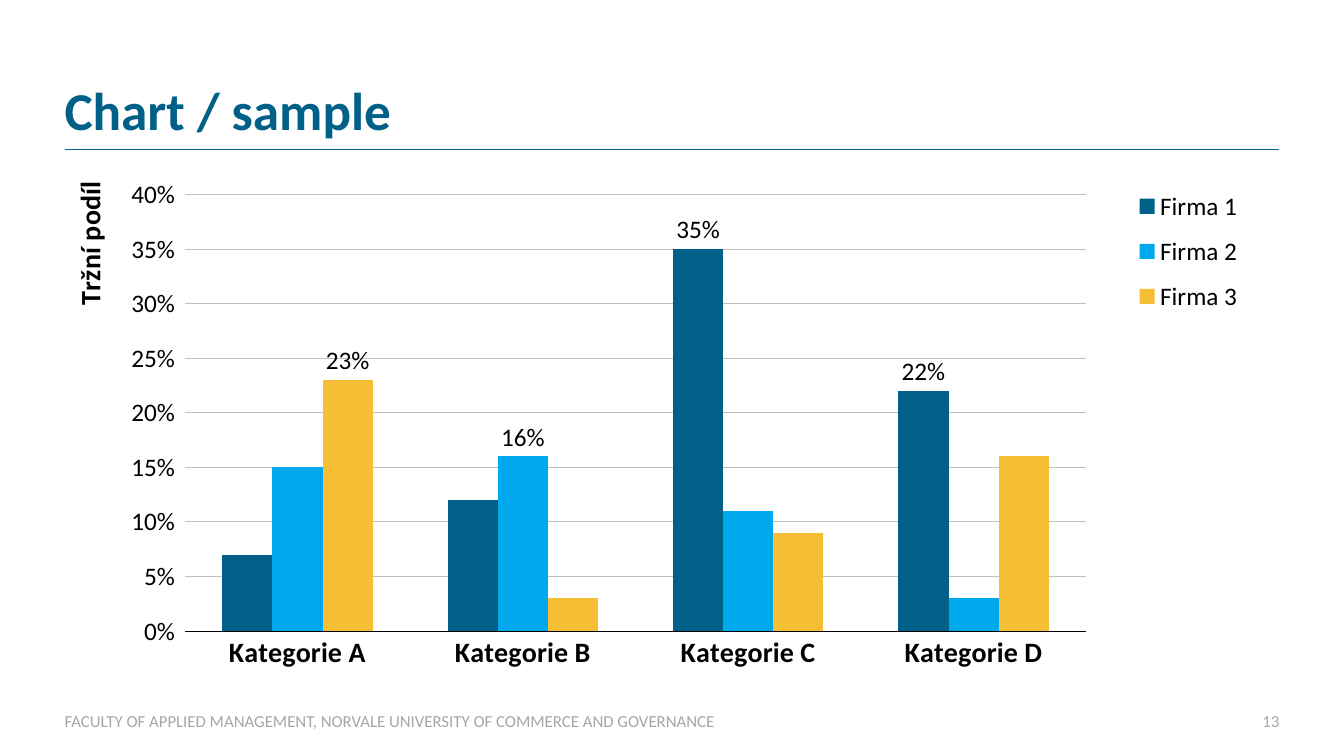
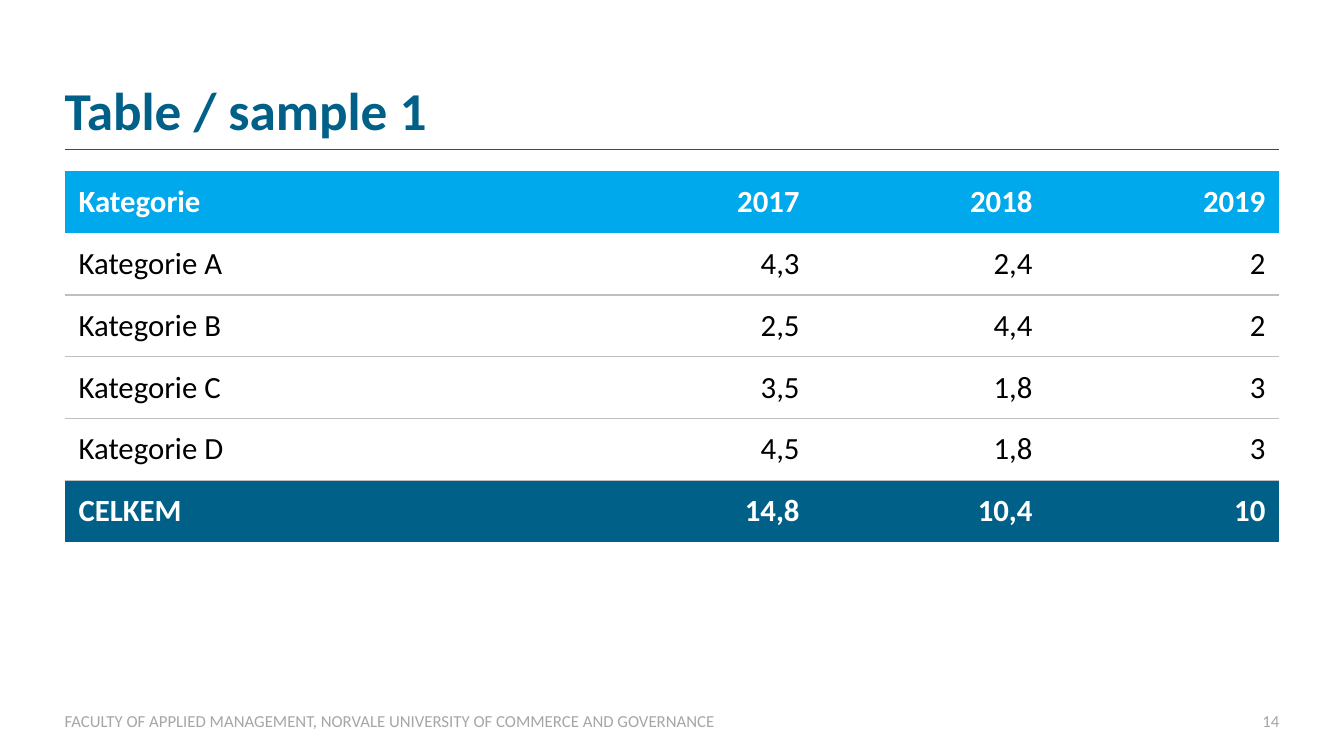
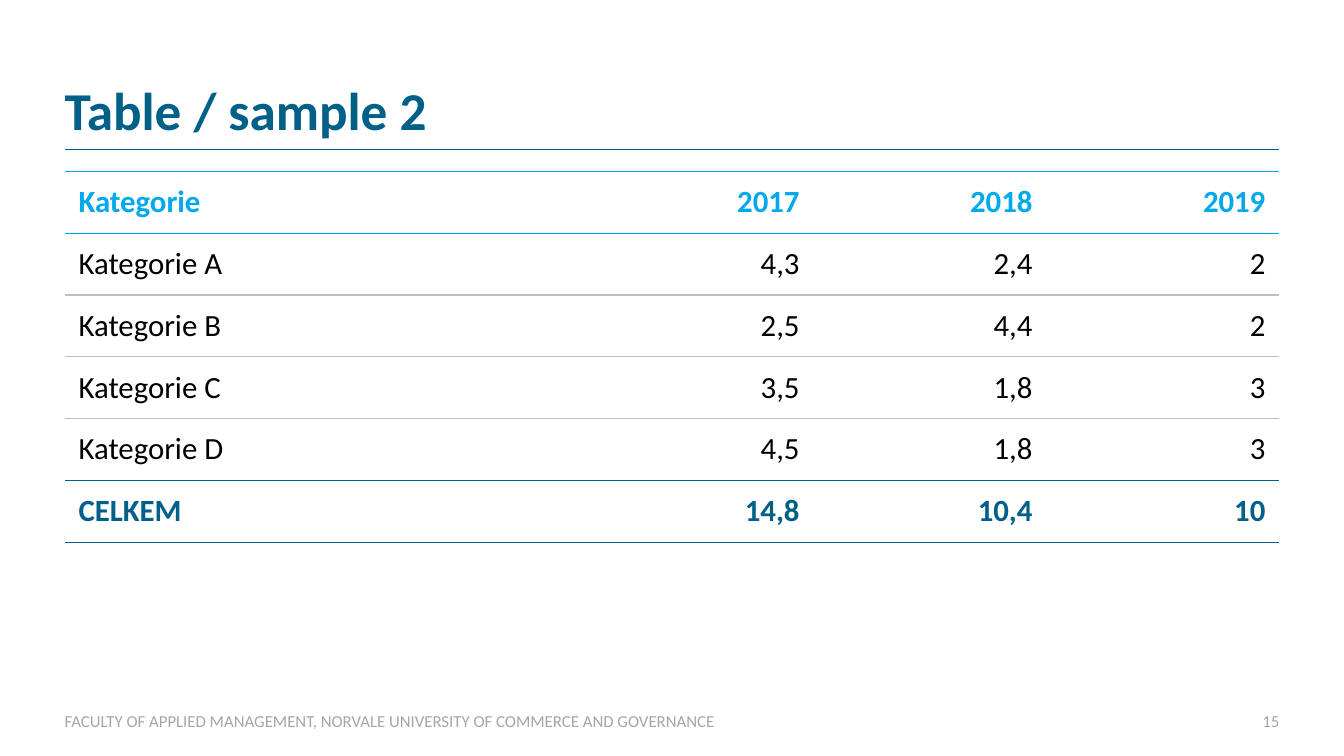
from lxml import etree
from pptx import Presentation
from pptx.chart.data import CategoryChartData
from pptx.dml.color import RGBColor
from pptx.enum.chart import XL_CHART_TYPE, XL_LABEL_POSITION, XL_LEGEND_POSITION, XL_TICK_MARK
from pptx.enum.shapes import MSO_CONNECTOR
from pptx.enum.text import MSO_ANCHOR, MSO_AUTO_SIZE, PP_ALIGN
from pptx.oxml.ns import qn
from pptx.util import Inches, Pt

COLUMNS = XL_CHART_TYPE.COLUMN_CLUSTERED
LABEL_ABOVE = XL_LABEL_POSITION.OUTSIDE_END
LEGEND_RIGHT = XL_LEGEND_POSITION.RIGHT
TICK_NONE = XL_TICK_MARK.NONE
TICK_OUT = XL_TICK_MARK.OUTSIDE
STRAIGHT = MSO_CONNECTOR.STRAIGHT
MIDDLE, BOTTOM = MSO_ANCHOR.MIDDLE, MSO_ANCHOR.BOTTOM
NO_AUTOFIT = MSO_AUTO_SIZE.NONE
LEFT, RIGHT = PP_ALIGN.LEFT, PP_ALIGN.RIGHT

FONT = "Calibri"
TEAL, BLUE, YELLOW = "006088", "00A8EC", "F5BE34"
BLACK, WHITE, SILVER, GRAY = "000000", "FFFFFF", "BFBFBF", "A6A6A6"
PLAIN_TABLE_STYLE = "{2D5ABB26-0587-4C30-8999-92F81FD0307C}"

MARGIN, CONTENT_WIDTH = 0.64, 12.05
TITLE_BOX = (MARGIN, 0.83, CONTENT_WIDTH, 0.58)
RULE_TOP = 1.48
CHART_BOX = (MARGIN, 1.7, CONTENT_WIDTH, 5.12)
TABLE_BOX = (MARGIN, 1.7, CONTENT_WIDTH, 3.68)
FOOTER_BOX = (MARGIN, 7.05, 10.16, 0.2)
NUMBER_BOX = (12.18, 7.05, 0.51, 0.2)
FIRST_NUMBER = 13
FOOTER = "FACULTY OF APPLIED MANAGEMENT, NORVALE UNIVERSITY OF COMMERCE AND GOVERNANCE"

CATEGORIES = ["Kategorie A", "Kategorie B", "Kategorie C", "Kategorie D"]
COMPANIES = [
    ("Firma 1", TEAL, (0.07, 0.12, 0.35, 0.22), (2, 3)),
    ("Firma 2", BLUE, (0.15, 0.16, 0.11, 0.03), (1,)),
    ("Firma 3", YELLOW, (0.23, 0.03, 0.09, 0.16), (0,)),
]
TABLE_ROWS = [
    ("Kategorie", "2017", "2018", "2019"),
    ("Kategorie A", "4,3", "2,4", "2"),
    ("Kategorie B", "2,5", "4,4", "2"),
    ("Kategorie C", "3,5", "1,8", "3"),
    ("Kategorie D", "4,5", "1,8", "3"),
    ("CELKEM", "14,8", "10,4", "10"),
]
FIRST_COLUMN_WIDTH = 5.12


def rgb(color):
    """Turn a hex string into a colour."""
    return RGBColor.from_string(color)


def inches(box):
    """Turn a box of numbers into lengths."""
    return [Inches(length) for length in box]


def style_font(font, size, color=BLACK, bold=False):
    """Apply the deck's typeface with a size, colour and weight."""
    font.name = FONT
    font.size = Pt(size)
    font.bold = bold
    font.color.rgb = rgb(color)


def write(frame, text, size, color, bold=False, align=LEFT, anchor=MIDDLE):
    """Write one line into a text frame without insets."""
    frame.margin_left = frame.margin_right = frame.margin_top = frame.margin_bottom = 0
    frame.auto_size = NO_AUTOFIT
    frame.word_wrap = True
    frame.vertical_anchor = anchor
    paragraph = frame.paragraphs[0]
    paragraph.alignment = align
    run = paragraph.add_run()
    run.text = text
    style_font(run.font, size, color, bold)
    return paragraph


def add_framed_slide(presentation, title, number):
    """Add a slide with its title, rule, footer and number."""
    slide = presentation.slides.add_slide(presentation.slide_layouts[5])
    shape = slide.shapes.title
    shape.left, shape.top, shape.width, shape.height = inches(TITLE_BOX)
    write(shape.text_frame, title, 38, TEAL, True, anchor=BOTTOM).line_spacing = 0.9
    rule = slide.shapes.add_connector(
        STRAIGHT, *inches((MARGIN, RULE_TOP, MARGIN + CONTENT_WIDTH, RULE_TOP)))
    rule.line.color.rgb = rgb(TEAL)
    rule.line.width = Pt(0.25)
    etree.SubElement(rule._element.spPr, qn("a:effectLst"))
    for box, text, align in ((FOOTER_BOX, FOOTER, LEFT), (NUMBER_BOX, str(number), RIGHT)):
        write(slide.shapes.add_textbox(*inches(box)).text_frame, text, 12, GRAY, align=align)
    return slide


def place_chart_part(element, position, index, inner=False):
    """Give a chart part a manual layout in fractions of the chart."""
    for old in element.findall(qn("c:layout")):
        element.remove(old)
    layout = etree.Element(qn("c:layout"))
    element.insert(index, layout)
    manual = etree.SubElement(layout, qn("c:manualLayout"))
    settings = [("layoutTarget", "inner")] if inner else []
    settings += [("xMode", "edge"), ("yMode", "edge")]
    settings += zip("xywh", position)
    for name, value in settings:
        etree.SubElement(manual, qn("c:" + name)).set("val", str(value))


def label_points(series, shown):
    """Label only the chosen points of a series."""
    labels = series.data_labels
    labels.show_value = True
    labels.number_format = "0%"
    labels.number_format_is_linked = False
    labels.position = LABEL_ABOVE
    style_font(labels.font, 18)
    hidden = [index for index in range(len(CATEGORIES)) if index not in shown]
    for place, index in enumerate(hidden):
        label = etree.Element(qn("c:dLbl"))
        etree.SubElement(label, qn("c:idx")).set("val", str(index))
        etree.SubElement(label, qn("c:delete")).set("val", "1")
        labels._element.insert(place, label)


def format_axes(chart):
    """Format both axes and the value axis title."""
    category_axis, value_axis = chart.category_axis, chart.value_axis
    category_axis.major_tick_mark = TICK_NONE
    category_axis.format.line.color.rgb = rgb(BLACK)
    category_axis.format.line.width = Pt(0.5)
    style_font(category_axis.tick_labels.font, 20, bold=True)
    value_axis.minimum_scale, value_axis.maximum_scale = 0, 0.4
    value_axis.major_unit = 0.05
    value_axis.major_tick_mark = TICK_OUT
    value_axis.format.line.fill.background()
    value_axis.major_gridlines.format.line.color.rgb = rgb(SILVER)
    value_axis.major_gridlines.format.line.width = Pt(0.75)
    value_axis.tick_labels.number_format = "0%"
    value_axis.tick_labels.number_format_is_linked = False
    style_font(value_axis.tick_labels.font, 18)
    frame = value_axis.axis_title.text_frame
    run = frame.paragraphs[0].add_run()
    run.text = "Tržní podíl"
    style_font(run.font, 20, bold=True)
    frame._txBody.bodyPr.set("rot", "-5400000")
    frame._txBody.bodyPr.set("vert", "horz")
    place_chart_part(value_axis.axis_title._element, (0, 0.01), 1)


def add_share_chart(slide, box):
    """Add the clustered columns of market shares."""
    data = CategoryChartData(number_format="0%")
    data.categories = CATEGORIES
    for name, _, values, _ in COMPANIES:
        data.add_series(name, values)
    chart = slide.shapes.add_chart(COLUMNS, *inches(box), data).chart
    style_font(chart.font, 18)
    chart.has_title = False
    plot = chart.plots[0]
    plot.gap_width, plot.overlap = 150, 0
    plot.vary_by_categories = False
    for series, (_, color, _, shown) in zip(plot.series, COMPANIES):
        series.format.fill.solid()
        series.format.fill.fore_color.rgb = rgb(color)
        label_points(series, shown)
    format_axes(chart)
    chart.has_legend = True
    chart.legend.position = LEGEND_RIGHT
    chart.legend.include_in_layout = False
    style_font(chart.legend.font, 18)
    place_chart_part(chart.legend._element, (0.87, 0.01, 0.11, 0.29), 1)
    plot_area = chart._chartSpace.chart.plotArea
    place_chart_part(plot_area, (0.099, 0.045, 0.742, 0.846), 0, inner=True)


def set_borders(cell, top, bottom):
    """Draw the top and bottom borders of a cell, where a colour is given."""
    properties = cell._tc.get_or_add_tcPr()
    borders = [(tag, color) for tag, color in (("a:lnT", top), ("a:lnB", bottom)) if color]
    for index, (tag, color) in enumerate(borders):
        line = etree.Element(qn(tag), w=str(Pt(1)))
        fill = etree.SubElement(line, qn("a:solidFill"))
        etree.SubElement(fill, qn("a:srgbClr")).set("val", color)
        properties.insert(index, line)


def fill_cell(cell, text, color, bold, align, fill):
    """Write and fill one table cell."""
    cell.margin_left = cell.margin_right = Inches(0.14)
    cell.margin_top = cell.margin_bottom = Inches(0.07)
    cell.vertical_anchor = MIDDLE
    if fill:
        cell.fill.solid()
        cell.fill.fore_color.rgb = rgb(fill)
    else:
        cell.fill.background()
    paragraph = cell.text_frame.paragraphs[0]
    paragraph.alignment = align
    run = paragraph.add_run()
    run.text = text
    style_font(run.font, 22, color, bold)


def add_totals_table(slide, box, filled):
    """Add the table, its header and total rows either filled or ruled."""
    last, columns = len(TABLE_ROWS) - 1, len(TABLE_ROWS[0])
    table = slide.shapes.add_table(last + 1, columns, *inches(box)).table
    table.horz_banding = False
    table._tbl.tblPr.find(qn("a:tableStyleId")).text = PLAIN_TABLE_STYLE
    table.columns[0].width = Inches(FIRST_COLUMN_WIDTH)
    for index in range(1, columns):
        table.columns[index].width = Inches((box[2] - FIRST_COLUMN_WIDTH) / (columns - 1))
    accents = {0: BLUE, last: TEAL}
    edge_rules = [None, None] if filled else [BLUE, TEAL]
    rules = [edge_rules[0]] * 2 + [SILVER] * (last - 2) + [edge_rules[1]] * 2
    for row, texts in enumerate(TABLE_ROWS):
        accent = accents.get(row)
        color = WHITE if accent and filled else accent or BLACK
        for column, text in enumerate(texts):
            cell = table.cell(row, column)
            fill_cell(cell, text, color, bool(accent), RIGHT if column else LEFT,
                      accent if filled else None)
            set_borders(cell, rules[row], rules[row + 1])


def main():
    """Build the three sample slides."""
    presentation = Presentation()
    presentation.slide_width, presentation.slide_height = Inches(13.33), Inches(7.5)
    titles = ("Chart / sample", "Table / sample 1", "Table / sample 2")
    chart_slide, filled_slide, ruled_slide = [
        add_framed_slide(presentation, title, number)
        for number, title in enumerate(titles, FIRST_NUMBER)]
    add_share_chart(chart_slide, CHART_BOX)
    add_totals_table(filled_slide, TABLE_BOX, True)
    add_totals_table(ruled_slide, TABLE_BOX, False)
    presentation.save("out.pptx")


if __name__ == "__main__":
    main()
